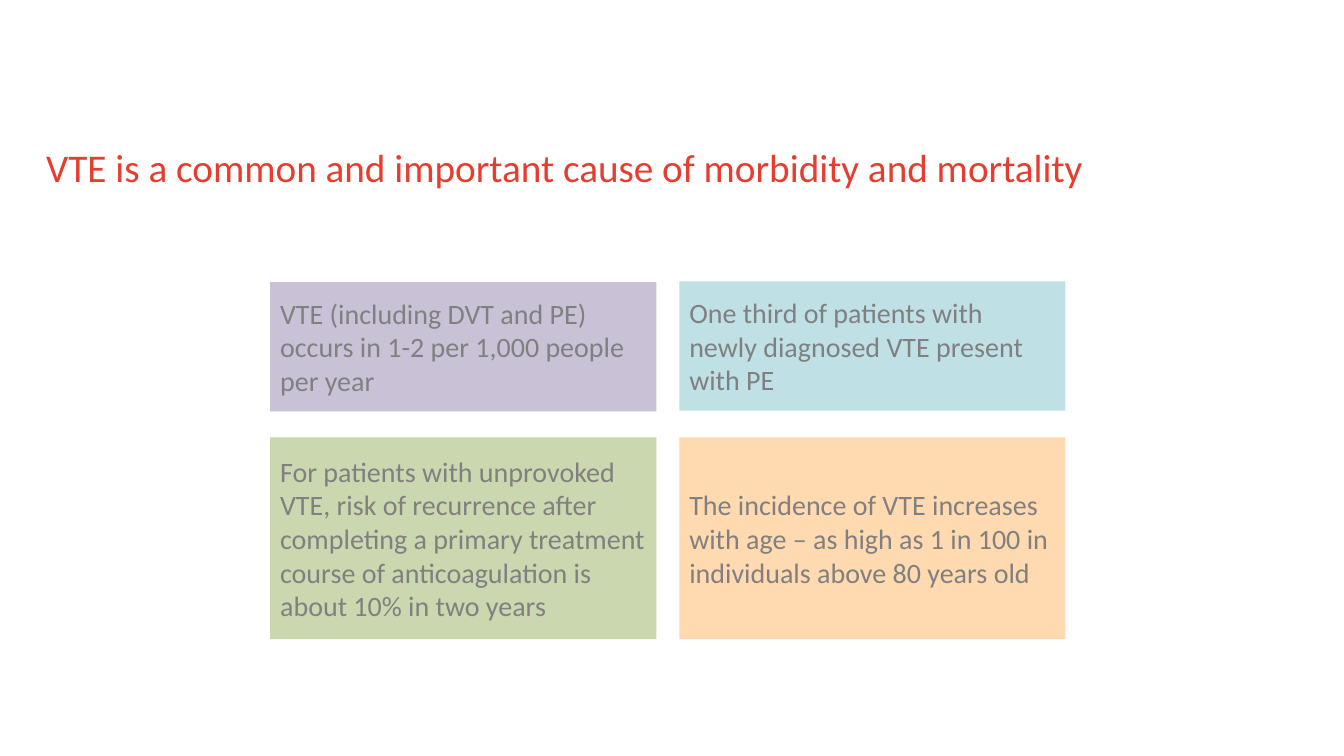
from dataclasses import dataclass

import pptx
import pptx.dml.color
import pptx.enum.shapes
import pptx.enum.text
import pptx.util
from pptx.dml.color import RGBColor
from pptx.util import Pt

FONT = "Calibri"
RED = RGBColor(0xE5, 0x3E, 0x31)
GREY = RGBColor(0x80, 0x80, 0x80)
PURPLE = RGBColor(0xC9, 0xC2, 0xD6)
BLUE = RGBColor(0xBF, 0xE0, 0xE5)
GREEN = RGBColor(0xCB, 0xD7, 0xAF)
ORANGE = RGBColor(0xFF, 0xD9, 0xAF)

LEFT_COLUMN = 193
RIGHT_COLUMN = 485.3
CARD_WIDTH = 275.8
TOP_HEIGHT = 92.4
BOTTOM_TOP = 312.5
BOTTOM_HEIGHT = 144


@dataclass(frozen=True)
class Card:
    text: str
    left: float
    top: float
    height: float
    color: RGBColor


CARDS = [
    Card("VTE (including DVT and PE) occurs in 1-2 per 1,000 people per year",
         LEFT_COLUMN, 201.5, TOP_HEIGHT, PURPLE),
    Card("One third of patients with newly diagnosed VTE present with PE",
         RIGHT_COLUMN, 201, TOP_HEIGHT, BLUE),
    Card("For patients with unprovoked VTE, risk of recurrence after completing "
         "a primary treatment course of anticoagulation is about 10% in two years",
         LEFT_COLUMN, BOTTOM_TOP, BOTTOM_HEIGHT, GREEN),
    Card("The incidence of VTE increases with age – as high as 1 in 100 in "
         "individuals above 80 years old",
         RIGHT_COLUMN, BOTTOM_TOP, BOTTOM_HEIGHT, ORANGE),
]


def write_text(box, text: str, *, size: float, color: RGBColor,
               anchor: pptx.enum.text.MSO_ANCHOR, spacing: float = 1.0,
               inset_x: float = 7.2, inset_y: float = 3.6) -> None:
    frame = box.text_frame
    frame.word_wrap = True
    frame.auto_size = pptx.enum.text.MSO_AUTO_SIZE.NONE
    frame.vertical_anchor = anchor
    frame.margin_left = frame.margin_right = Pt(inset_x)
    frame.margin_top = frame.margin_bottom = Pt(inset_y)
    para = frame.paragraphs[0]
    para.alignment = pptx.enum.text.PP_ALIGN.LEFT
    para.line_spacing = spacing
    para.space_before = Pt(0)
    span = para.add_run()
    span.text = text
    span.font.name = FONT
    span.font.size = Pt(size)
    span.font.color.rgb = color


def draw_title(page: pptx.slide.Slide, text: str) -> None:
    title = page.shapes.title
    title.left, title.top = Pt(33), Pt(106)
    title.width, title.height = Pt(864), Pt(33)
    write_text(title, text, size=28, color=RED, spacing=0.9,
               anchor=pptx.enum.text.MSO_ANCHOR.TOP, inset_x=0, inset_y=0)


def draw_card(page: pptx.slide.Slide, card: Card) -> None:
    box = page.shapes.add_shape(
        pptx.enum.shapes.MSO_SHAPE.RECTANGLE,
        Pt(card.left), Pt(card.top), Pt(CARD_WIDTH), Pt(card.height))
    box.shadow.inherit = False
    box.fill.solid()
    box.fill.fore_color.rgb = card.color
    box.line.fill.background()
    write_text(box, card.text, size=20, color=GREY,
               anchor=pptx.enum.text.MSO_ANCHOR.MIDDLE)


def main() -> None:
    deck = pptx.Presentation()
    deck.slide_width, deck.slide_height = Pt(960), Pt(540)
    page = deck.slides.add_slide(deck.slide_layouts.get_by_name("Title Only"))
    draw_title(page, "VTE is a common and important cause of morbidity and mortality")
    for card in CARDS:
        draw_card(page, card)
    deck.save("out.pptx")


if __name__ == "__main__":
    main()
